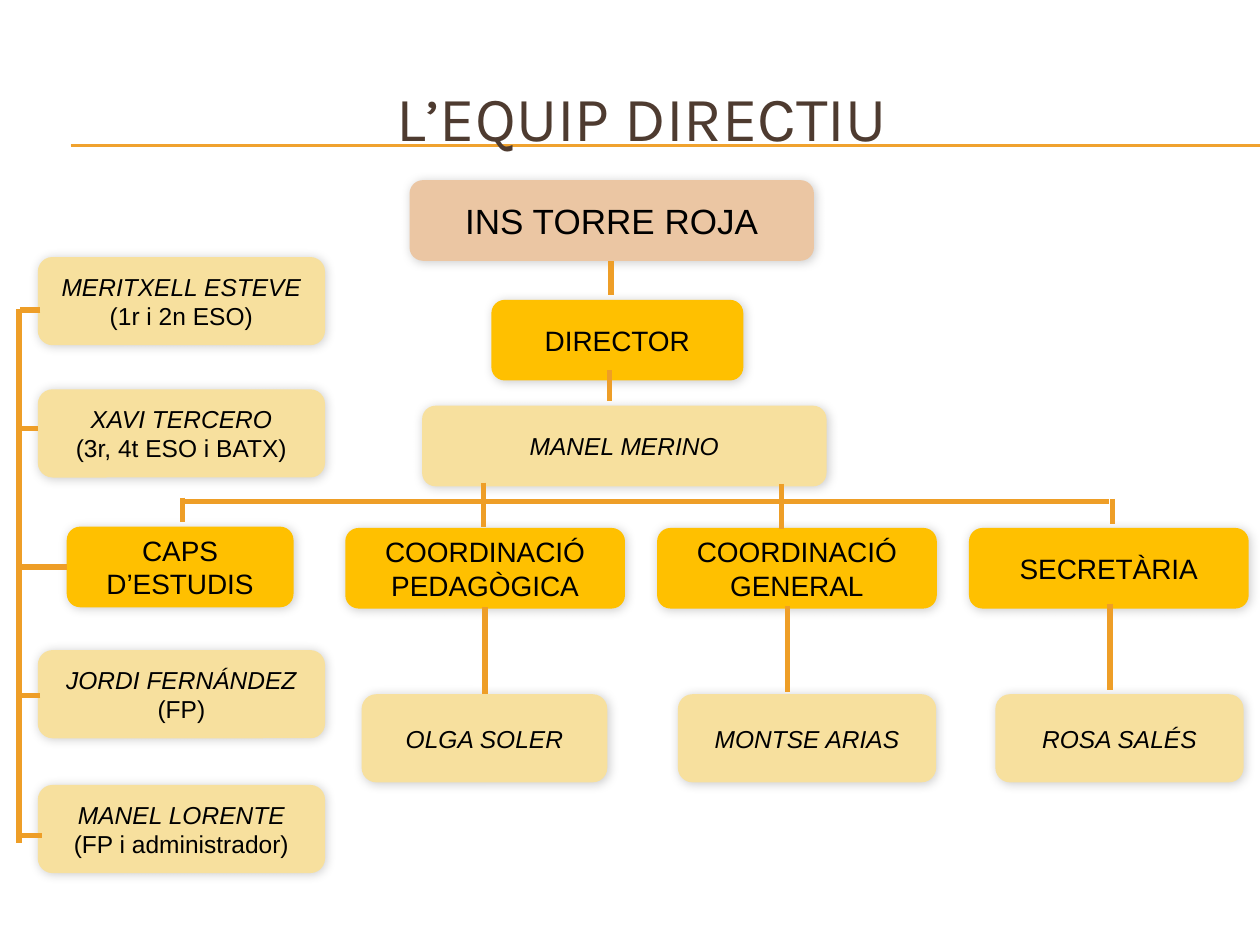
import pptx
import pptx.util
import pptx.dml.color
import pptx.enum.shapes
import pptx.enum.text
import pptx.oxml.ns
from lxml import etree
from pptx.util import Inches

COLORS = {
    "title": "4E3B30",
    "rule": "F0A22E",
    "link": "EE9E27",
    "school": "EBC6A3",
    "role": "FFC000",
    "person": "F7E09E",
    "text": "000000",
}
SIZES = {"school": 20, "role": 16, "person": 14}


def rgb(name):
    return pptx.dml.color.RGBColor.from_string(COLORS[name])


def add_effects(element):
    return etree.SubElement(element.spPr, pptx.oxml.ns.qn("a:effectLst"))


def add_soft_shadow(card):
    shadow = etree.SubElement(
        add_effects(card._element), pptx.oxml.ns.qn("a:outerShdw"),
        blurRad=str(pptx.util.Pt(6)), dist=str(pptx.util.Pt(1)),
        dir=str(45 * 60000), algn="tl", rotWithShape="0")
    color = etree.SubElement(shadow, pptx.oxml.ns.qn("a:srgbClr"), val=COLORS["text"])
    etree.SubElement(color, pptx.oxml.ns.qn("a:alpha"), val="20000")


def add_text(paragraph, text, size, font, color, italic=False):
    paragraph.alignment = pptx.enum.text.PP_ALIGN.CENTER
    run = paragraph.add_run()
    run.text = text
    run.font.size = pptx.util.Pt(size)
    run.font.name = font
    run.font.italic = italic
    run.font.color.rgb = rgb(color)


def add_title(slide, text):
    title = slide.shapes.add_textbox(Inches(0.36), Inches(0.5), Inches(9.47), Inches(0.84))
    frame = title.text_frame
    frame.word_wrap = True
    frame.vertical_anchor = pptx.enum.text.MSO_ANCHOR.MIDDLE
    add_text(frame.paragraphs[0], text, 36, "Karla", "title")


def add_card(slide, kind, left, top, width, height, label, duty=None):
    """Add a rounded card; duty is an upright second line under the label."""
    card = slide.shapes.add_shape(
        pptx.enum.shapes.MSO_SHAPE.FLOWCHART_ALTERNATE_PROCESS,
        Inches(left), Inches(top), Inches(width), Inches(height))
    card.fill.solid()
    card.fill.fore_color.rgb = rgb(kind)
    card.line.fill.background()
    add_soft_shadow(card)
    frame = card.text_frame
    frame.word_wrap = True
    frame.vertical_anchor = pptx.enum.text.MSO_ANCHOR.MIDDLE
    size = SIZES[kind]
    add_text(frame.paragraphs[0], label, size, "Arial", "text", kind == "person")
    if duty:
        add_text(frame.add_paragraph(), duty, size, "Arial", "text")


def add_line(slide, x1, y1, x2, y2, color="link", weight=3):
    line = slide.shapes.add_connector(
        pptx.enum.shapes.MSO_CONNECTOR.STRAIGHT,
        Inches(x1), Inches(y1), Inches(x2), Inches(y2))
    line.line.color.rgb = rgb(color)
    line.line.width = pptx.util.Pt(weight)
    add_effects(line._element)


def add_management(slide):
    add_card(slide, "role", 3.9, 2.38, 2, 0.64, "DIRECTOR")
    add_card(slide, "school", 3.25, 1.43, 3.21, 0.64, "INS TORRE ROJA")
    add_card(slide, "person", 3.35, 3.22, 3.21, 0.64, "MANEL MERINO")


def add_heads_of_studies(slide):
    heads = [
        (2.04, "MERITXELL ESTEVE", "(1r i 2n ESO)"),
        (3.09, "XAVI TERCERO", "(3r, 4t ESO i BATX)"),
        (5.16, "JORDI FERNÁNDEZ", "(FP)"),
        (6.23, "MANEL LORENTE", "(FP i administrador)"),
    ]
    for top, name, duty in heads:
        add_card(slide, "person", 0.3, top, 2.28, 0.7, name, duty)
    add_card(slide, "role", 0.53, 4.18, 1.8, 0.64, "CAPS D’ESTUDIS")


def add_departments(slide):
    departments = [
        ("COORDINACIÓ PEDAGÒGICA", "OLGA SOLER", 2.87, 1.95),
        ("COORDINACIÓ GENERAL", "MONTSE ARIAS", 5.38, 2.05),
        ("SECRETÀRIA", "ROSA SALÉS", 7.9, 1.97),
    ]
    for column, (role, name, left, width) in enumerate(departments):
        add_card(slide, "role", 2.74 + column * 2.475, 4.19, 2.22, 0.64, role)
        add_card(slide, "person", left, 5.51, width, 0.7, name)


def add_links(slide):
    verticals = [
        (4.85, 2.07, 2.34), (4.84, 2.94, 3.18),
        (3.84, 3.83, 4.18), (6.2, 3.84, 4.2), (8.83, 3.96, 4.16), (1.45, 3.95, 4.14),
        (3.85, 4.82, 5.51), (6.25, 4.81, 5.49), (8.81, 4.79, 5.48),
        (0.15, 2.45, 6.69),
    ]
    horizontals = [
        (3.98, 8.8, 1.46),
        (4.5, 0.53, 0.13), (2.46, 0.32, 0.16), (3.4, 0.3, 0.15),
        (5.52, 0.32, 0.16), (6.63, 0.33, 0.17),
    ]
    for x, top, bottom in verticals:
        add_line(slide, x, top, x, bottom)
    for y, right, left in horizontals:
        add_line(slide, right, y, left, y)


def main():
    deck = pptx.Presentation()
    deck.slide_width, deck.slide_height = Inches(10), Inches(7.5)
    slide = deck.slides.add_slide(deck.slide_layouts[6])
    for y in (1.15, 1.16):
        add_line(slide, 0.56, y, 10, y, "rule", 0.75)
    add_title(slide, "L’EQUIP DIRECTIU")
    add_management(slide)
    add_heads_of_studies(slide)
    add_departments(slide)
    add_links(slide)
    deck.save("out.pptx")


if __name__ == "__main__":
    main()
